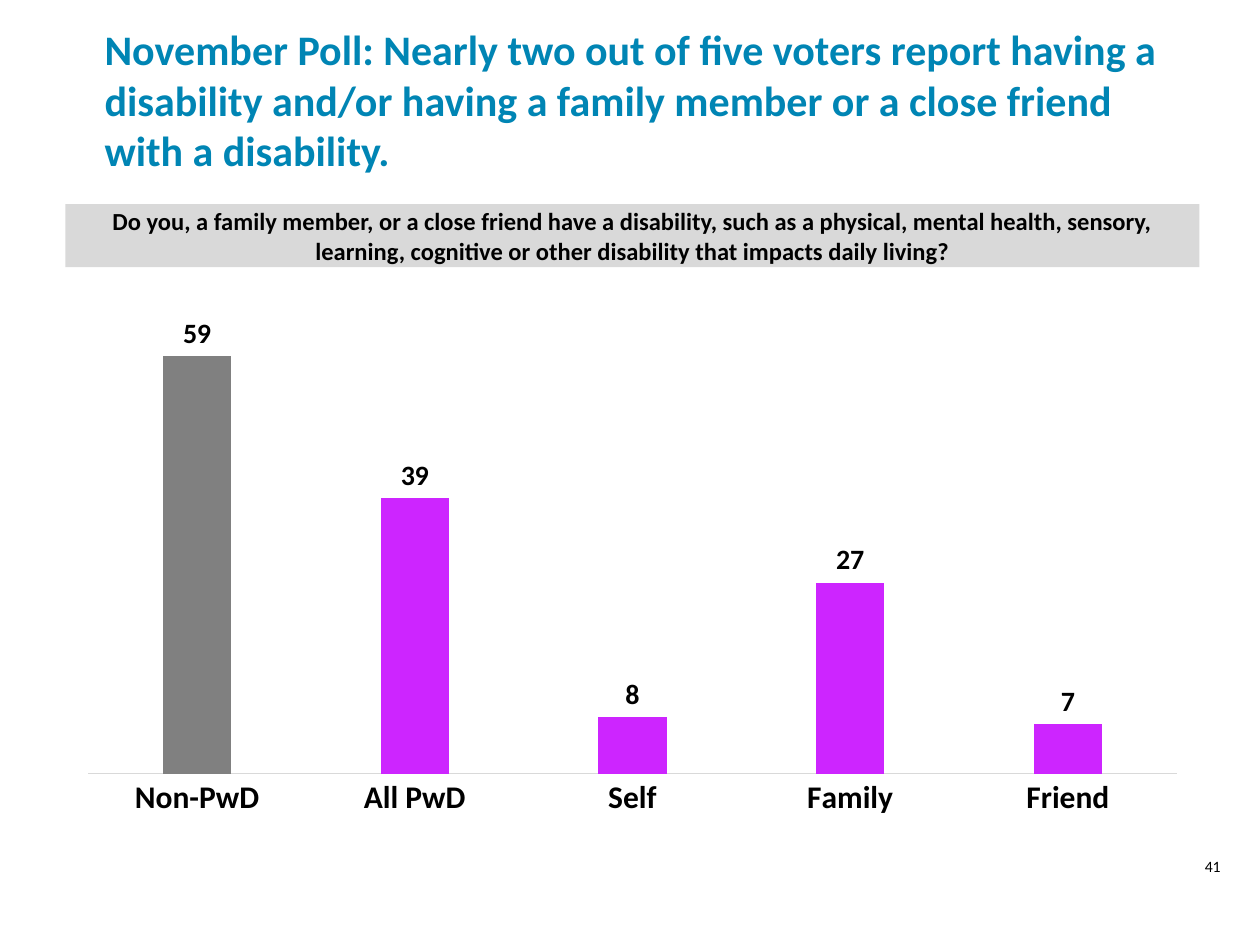
import pptx
import pptx.util
import pptx.chart.data
import pptx.dml.color
import pptx.enum.chart
import pptx.enum.shapes
import pptx.enum.text
import pptx.oxml

Inches, Pt = pptx.util.Inches, pptx.util.Pt
RGB = pptx.dml.color.RGBColor
ALIGN, ANCHOR = pptx.enum.text.PP_ALIGN, pptx.enum.text.MSO_ANCHOR
XL = pptx.enum.chart

TITLE = ("November Poll: Nearly two out of five voters report having a disability "
         "and/or having a family member or a close friend with a disability.")
ASK = ("Do you, a family member, or a close friend have a disability, such as a physical, "
       "mental health, sensory, learning, cognitive or other disability that impacts daily living?")
PAGE = "41"
VOTERS = {"Non-PwD": 59, "All PwD": 39, "Self": 8, "Family": 27, "Friend": 7}

FACE = "Calibri"
BLACK = RGB(0x00, 0x00, 0x00)
TEAL = RGB(0x00, 0x85, 0xB4)
PURPLE = RGB(0xCD, 0x25, 0xFF)
GRAY = RGB(0x80, 0x80, 0x80)
PALE = RGB(0xD9, 0xD9, 0xD9)

WIDE, HIGH = 10, 7.5
LEFT, SPAN = 0.52, 0.9 * WIDE
PLOT = {"x": 0.02, "y": 0.03, "w": 0.96, "h": 0.84}


def style(font, size, color=BLACK, bold=True):
    font.name, font.size, font.bold = FACE, Pt(size), bold
    font.color.rgb = color


def place(*box):
    return [Inches(n) for n in box]


def write(shape, text, align, anchor, size, color=BLACK, bold=True):
    frame = shape.text_frame
    frame.word_wrap = True
    frame.auto_size = pptx.enum.text.MSO_AUTO_SIZE.NONE
    frame.vertical_anchor = anchor
    para = frame.paragraphs[0]
    para.alignment = align
    run = para.add_run()
    run.text = text
    style(run.font, size, color, bold)


def set_plot(chart):
    area = chart._chartSpace.chart.plotArea
    for old in area.findall(pptx.oxml.ns.qn("c:layout")):
        area.remove(old)
    modes = "".join(f'<c:{k}Mode val="edge"/>' for k in "xy")
    sizes = "".join(f'<c:{k} val="{v}"/>' for k, v in PLOT.items())
    area.insert(0, pptx.oxml.parse_xml(
        f'<c:layout {pptx.oxml.ns.nsdecls("c")}><c:manualLayout>'
        f'<c:layoutTarget val="inner"/>{modes}{sizes}</c:manualLayout></c:layout>'))


def add_bars(slide):
    data = pptx.chart.data.CategoryChartData()
    data.categories = list(VOTERS)
    data.add_series("Series 1", list(VOTERS.values()))
    chart = slide.shapes.add_chart(XL.XL_CHART_TYPE.COLUMN_CLUSTERED,
                                   *place(LEFT, 2.07, SPAN, 4.68), data).chart
    style(chart.font, 10, bold=False)
    chart.has_title = chart.has_legend = False
    set_plot(chart)

    value = chart.value_axis
    value.minimum_scale, value.maximum_scale = 0, 70
    value.has_major_gridlines = value.visible = False
    axis = chart.category_axis
    axis.major_tick_mark = XL.XL_TICK_MARK.NONE
    axis.format.line.color.rgb = PALE
    axis.format.line.width = Pt(0.75)
    style(axis.tick_labels.font, 18)

    plot = chart.plots[0]
    plot.gap_width, plot.overlap = 219, -27
    plot.vary_by_categories = False
    bars = plot.series[0]
    bars.invert_if_negative = False
    for part, color in ((bars, PURPLE), (bars.points[0], GRAY)):
        part.format.fill.solid()
        part.format.fill.fore_color.rgb = color
    labels = bars.data_labels
    labels.show_value = True
    labels.position = XL.XL_LABEL_POSITION.OUTSIDE_END
    style(labels.font, 16)


def main():
    deck = pptx.Presentation()
    deck.slide_width, deck.slide_height = place(WIDE, HIGH)
    slide = deck.slides.add_slide(deck.slide_layouts[5])

    title = slide.shapes.title
    title.left, title.top, title.width, title.height = place(0.73, 0.21, 8.79, 1.16)
    write(title, TITLE, ALIGN.LEFT, ANCHOR.MIDDLE, 24, TEAL)

    band = slide.shapes.add_shape(pptx.enum.shapes.MSO_SHAPE.RECTANGLE,
                                  *place(LEFT, 1.62, SPAN, 0.5))
    band.shadow.inherit = False
    band.fill.solid()
    band.fill.fore_color.rgb = PALE
    band.line.fill.background()
    write(band, ASK, ALIGN.CENTER, ANCHOR.MIDDLE, 14)

    add_bars(slide)

    page = slide.shapes.add_textbox(*place(9.25, 6.75, 0.75, 0.33))
    write(page, PAGE, ALIGN.CENTER, ANCHOR.TOP, 9, bold=False)
    deck.save("out.pptx")


if __name__ == "__main__":
    main()
